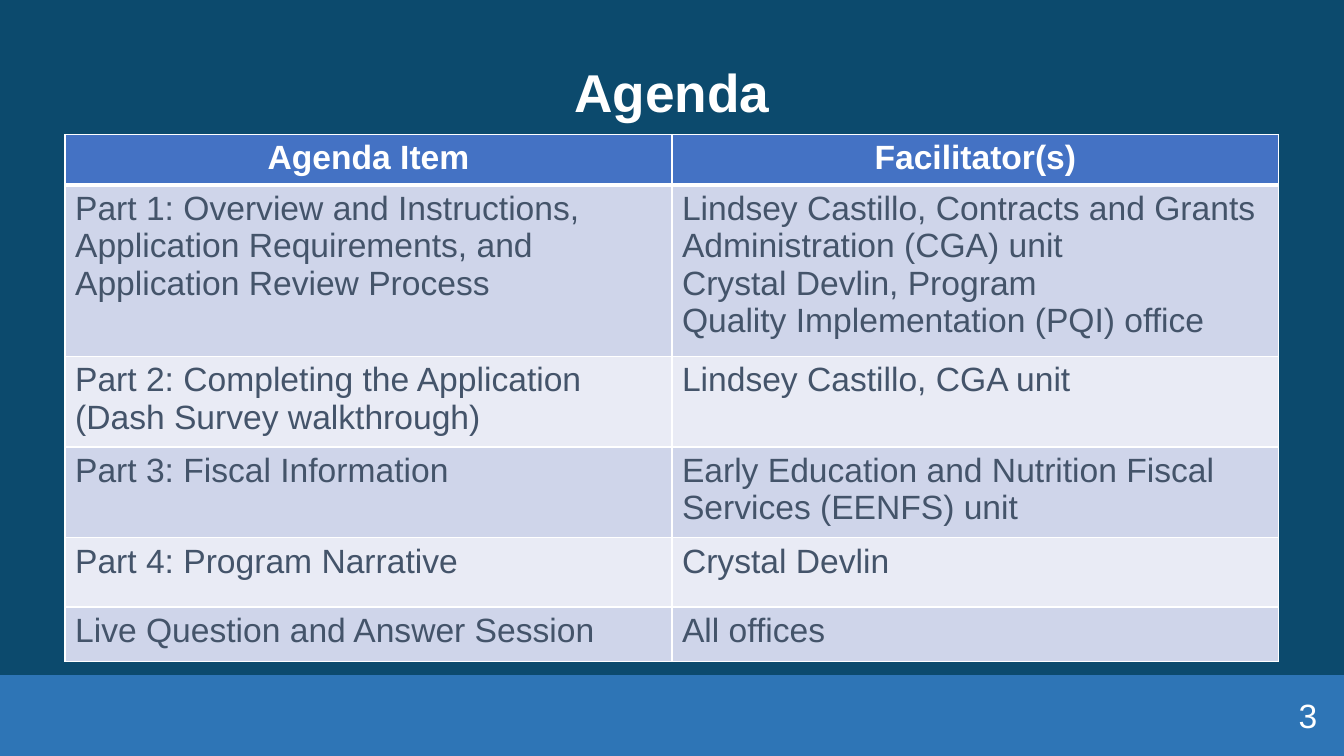
"""Build the agenda slide: title, facilitator table and numbered footer band."""
from dataclasses import dataclass

from lxml.etree import SubElement
from pptx import Presentation
from pptx.dml.color import RGBColor
from pptx.enum.shapes import MSO_SHAPE
from pptx.enum.text import MSO_ANCHOR, PP_ALIGN
from pptx.oxml.ns import qn
from pptx.util import Pt

PX = 9525
WIDTH, HEIGHT = 1280, 720
NBSP = chr(160)
HEX = {
    "back": "0C4A6D", "band": "2E75B6", "head": "4472C4", "odd": "CFD5EA",
    "even": "E9EBF5", "white": "FFFFFF", "ink": "44546A",
}


@dataclass(frozen=True)
class Box:
    left: int
    top: int
    width: int
    height: int

    def emu(self) -> tuple:
        return tuple(n * PX for n in (self.left, self.top, self.width, self.height))


@dataclass(frozen=True)
class Label:
    text: str
    box: Box
    size: int
    bold: bool
    align: PP_ALIGN
    line: float


@dataclass(frozen=True)
class Row:
    item: str
    leader: str
    height: int


LABELS = [
    Label("Agenda", Box(16, 21, 1248, 139), 38, True, PP_ALIGN.CENTER, 0.9),
    Label("3", Box(976, 662, 288, 38), 24, False, PP_ALIGN.RIGHT, 1.0),
]
ROWS = [
    Row("Agenda Item", "Facilitator(s)", 46),
    Row("Part 1: Overview and Instructions, Application Requirements, and Application Review Process",
        "Lindsey Castillo, Contracts and Grants Administration (CGA) unit\n"
        f"Crystal Devlin,{NBSP}Program Quality{NBSP}Implementation (PQI) office", 152),
    Row("Part 2: Completing the Application (Dash Survey walkthrough)", "Lindsey Castillo, CGA unit", 81),
    Row("Part 3: Fiscal Information", "Early Education and Nutrition Fiscal Services (EENFS) unit", 81),
    Row("Part 4: Program Narrative", "Crystal Devlin", 66),
    Row("Live Question and Answer Session", "All offices", 52),
]
BAND = Box(0, 643, WIDTH, HEIGHT - 643)
GRID = Box(62, 128, 1156, sum(row.height for row in ROWS))


def paint(fill, name: str) -> None:
    fill.solid()
    fill.fore_color.rgb = RGBColor.from_string(HEX[name])


def write(frame, text: str, size: int, bold: bool, tint: str, align: PP_ALIGN, line=None) -> None:
    para = frame.paragraphs[0]
    para.text = text
    for key, value in {"alignment": align, "line_spacing": line}.items():
        setattr(para, key, value)
    for run in para.runs:
        for key, value in {"name": "Arial", "size": Pt(size), "bold": bold}.items():
            setattr(run.font, key, value)
        run.font.color.rgb = RGBColor.from_string(HEX[tint])


def edge(cell, sides: dict) -> None:
    props = cell._tc.get_or_add_tcPr()
    for side, points in sides.items():
        line = SubElement(props, qn(f"a:ln{side}"), w=str(Pt(points)))
        SubElement(SubElement(line, qn("a:solidFill")), qn("a:srgbClr"), val=HEX["white"])


def add_label(slide, label: Label) -> None:
    frame = slide.shapes.add_textbox(*label.box.emu()).text_frame
    for key, value in {"word_wrap": True, "vertical_anchor": MSO_ANCHOR.MIDDLE}.items():
        setattr(frame, key, value)
    write(frame, label.text, label.size, label.bold, "white", label.align, label.line)


def add_band(slide) -> None:
    band = slide.shapes.add_shape(MSO_SHAPE.RECTANGLE, *BAND.emu())
    band.shadow.inherit = False
    paint(band.fill, "band")
    band.line.fill.background()


def add_grid(slide) -> None:
    table = slide.shapes.add_table(len(ROWS), 2, *GRID.emu()).table
    for i, row in enumerate(ROWS):
        table.rows[i].height = row.height * PX
        head = i == 0
        shade = "head" if head else "odd" if i % 2 else "even"
        tint, align = ("white", PP_ALIGN.CENTER) if head else ("ink", PP_ALIGN.LEFT)
        for j, text in enumerate((row.item, row.leader)):
            cell = table.cell(i, j)
            edge(cell, {"L": 1, "R": 1, "T": 3 if i == 1 else 1, "B": 3 if head else 1})
            paint(cell.fill, shade)
            write(cell.text_frame, text, 24, head, tint, align)


def main() -> None:
    deck = Presentation()
    for key, value in {"slide_width": WIDTH, "slide_height": HEIGHT}.items():
        setattr(deck, key, value * PX)
    slide = deck.slides.add_slide(deck.slide_layouts[6])
    paint(slide.background.fill, "back")
    add_band(slide)
    for label in LABELS:
        add_label(slide, label)
    add_grid(slide)
    deck.save("out.pptx")


if __name__ == "__main__":
    main()
